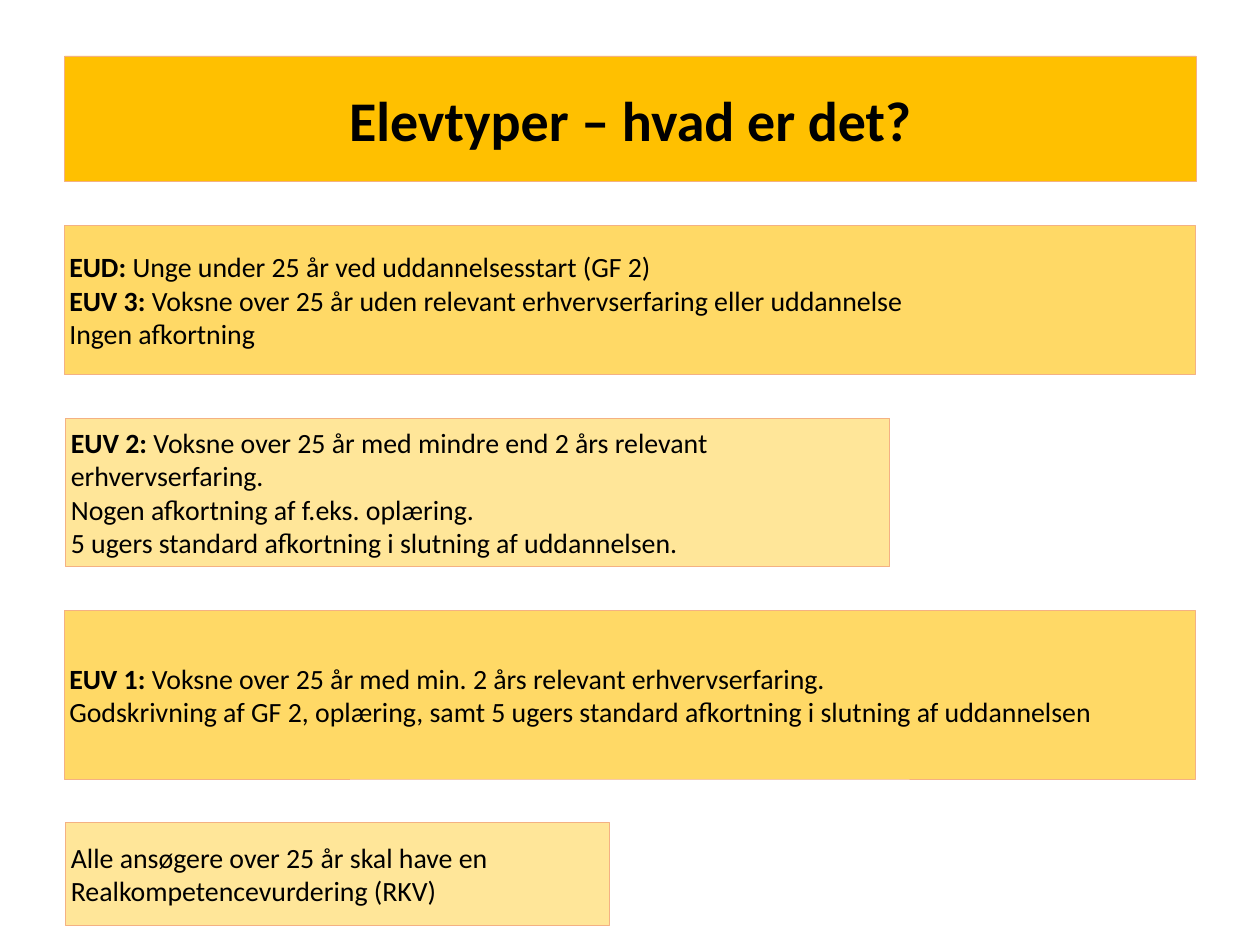
from dataclasses import dataclass

from pptx import Presentation
from pptx.dml.color import RGBColor
from pptx.enum.shapes import MSO_SHAPE
from pptx.enum.text import MSO_ANCHOR, MSO_AUTO_SIZE, PP_ALIGN
from pptx.shapes.autoshape import Shape
from pptx.util import Pt

GOLD = RGBColor(0xFF, 0xC0, 0x00)
AMBER = RGBColor(0xFF, 0xD9, 0x66)
CREAM = RGBColor(0xFF, 0xE6, 0x99)
PEACH = RGBColor(0xF4, 0xB1, 0x83)
BLACK = RGBColor(0x00, 0x00, 0x00)

TOP = 75.6
GAP = 59
FULL_WIDTH = 1527.12

FRAME_FORMAT = {
    "word_wrap": True,
    "auto_size": MSO_AUTO_SIZE.NONE,
    "vertical_anchor": MSO_ANCHOR.MIDDLE,
    "margin_left": Pt(7.2),
    "margin_right": Pt(7.2),
    "margin_top": Pt(3.6),
    "margin_bottom": Pt(3.6),
}


@dataclass(frozen=True)
class Line:
    text: str
    label: str = ""


@dataclass(frozen=True)
class Box:
    left: float
    width: float
    height: float
    fill: RGBColor
    lines: tuple[Line, ...]
    size: float = 37.6
    align: PP_ALIGN = PP_ALIGN.LEFT


TITLE = Box(87.12, FULL_WIDTH, 169.92, GOLD,
            (Line("", "Elevtyper – hvad er det?"),), 75.6, PP_ALIGN.CENTER)

STUDENT_TYPES = (
    Box(86.4, FULL_WIDTH, 200.88, AMBER, (
        Line("Unge under 25 år ved uddannelsesstart (GF 2)", "EUD: "),
        Line("Voksne over 25 år uden relevant erhvervserfaring eller uddannelse", "EUV 3: "),
        Line("Ingen afkortning"),
    )),
    Box(88.56, 1112.4, 200.88, CREAM, (
        Line("Voksne over 25 år med mindre end 2 års relevant erhvervserfaring.", "EUV 2: "),
        Line("Nogen afkortning af f.eks. oplæring."),
        Line("5 ugers standard afkortning i slutning af uddannelsen."),
    )),
    Box(86.4, FULL_WIDTH, 227.52, AMBER, (
        Line(" Voksne over 25 år med min. 2 års relevant erhvervserfaring.", "EUV 1:"),
        Line("Godskrivning af GF 2, oplæring, samt 5 ugers standard afkortning "
             "i slutning af uddannelsen"),
    )),
    Box(88.56, 734.4, 138.24, CREAM, (
        Line("Alle ansøgere over 25 år skal have en Realkompetencevurdering (RKV)"),
    )),
)


def write_lines(s: Shape, box: Box) -> None:
    tf = s.text_frame
    for name, value in FRAME_FORMAT.items():
        setattr(tf, name, value)
    for i, line in enumerate(box.lines):
        p = tf.add_paragraph() if i else tf.paragraphs[0]
        p.alignment = box.align
        for text, bold in ((line.label, True), (line.text, False)):
            if not text:
                continue
            r = p.add_run()
            r.text = text
            font_format = {"name": "Calibri", "size": Pt(box.size), "bold": bold}
            for name, value in font_format.items():
                setattr(r.font, name, value)
            r.font.color.rgb = BLACK


def draw_box(s: Shape, box: Box, top: float) -> None:
    place = {"left": box.left, "top": top, "width": box.width, "height": box.height}
    for name, value in place.items():
        setattr(s, name, Pt(value))
    s.fill.solid()
    s.fill.fore_color.rgb = box.fill
    s.line.color.rgb = PEACH
    s.line.width = Pt(1)
    write_lines(s, box)


def main() -> None:
    prs = Presentation()
    prs.slide_width = Pt(1700.64)
    prs.slide_height = Pt(1275.84)
    slide = prs.slides.add_slide(prs.slide_layouts[5])

    draw_box(slide.shapes.title, TITLE, TOP)
    top = TOP + TITLE.height + GAP
    for box in STUDENT_TYPES:
        s = slide.shapes.add_shape(MSO_SHAPE.RECTANGLE, 0, 0, 0, 0)
        s.shadow.inherit = False
        draw_box(s, box, top)
        top += box.height + GAP

    prs.save("out.pptx")


if __name__ == "__main__":
    main()
